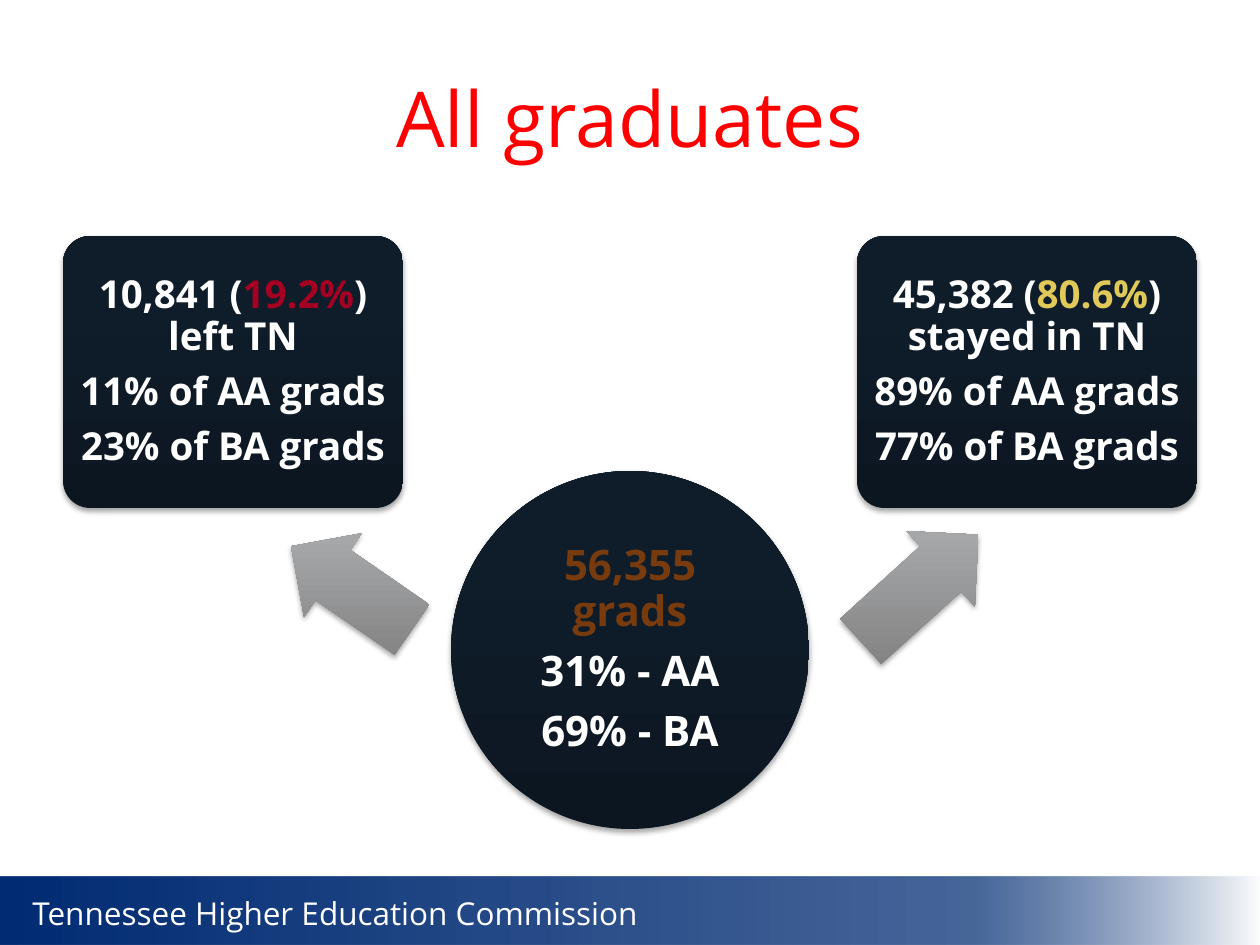
"""Build the slide on where all graduates went."""
from typing import NamedTuple

from lxml.etree import SubElement
from pptx import Presentation
from pptx.dml.color import RGBColor
from pptx.enum.shapes import MSO_SHAPE
from pptx.enum.text import MSO_ANCHOR, PP_ALIGN
from pptx.oxml.ns import qn
from pptx.util import Pt

SCALE = 914400 / 126
FONT = "Open Sans"
WHITE = RGBColor(0xFF, 0xFF, 0xFF)
BLACK = RGBColor(0x00, 0x00, 0x00)
RED = RGBColor(0xFF, 0x00, 0x00)
BLUE = RGBColor(0x00, 0x2C, 0x73)
BROWN = RGBColor(0x78, 0x3B, 0x0D)
WINE = RGBColor(0xA5, 0x00, 0x21)
GOLD = RGBColor(0xE1, 0xC9, 0x59)


class Stop(NamedTuple):
    """One gradient stop, in percent."""
    place: int
    color: RGBColor
    alpha: int = 100


class Run(NamedTuple):
    """A piece of text in one colour."""
    text: str
    color: RGBColor = WHITE


class Node(NamedTuple):
    """A dark shape with centred bold lines."""
    kind: MSO_SHAPE
    area: tuple[int, int, int, int]
    inset: int
    size: int
    lines: list[list[Run]]
    adjust: tuple[float, ...] = ()


class Arrow(NamedTuple):
    """A grey block arrow turned by some degrees."""
    area: tuple[int, int, int, int]
    turn: float


NAVY = [Stop(0, RGBColor(0x0C, 0x16, 0x21)), Stop(80, RGBColor(0x0F, 0x1D, 0x2B)),
        Stop(100, RGBColor(0x0F, 0x1D, 0x2C))]
GREY = [Stop(0, RGBColor(0x80, 0x80, 0x81)), Stop(80, RGBColor(0xA6, 0xA7, 0xA8)),
        Stop(100, RGBColor(0xA7, 0xA7, 0xA9))]
BAND = [Stop(0, BLUE), Stop(77, BLUE, 72), Stop(100, WHITE)]


def box(left: int, count: str, share: Run, where: str, shares: tuple[int, int]) -> Node:
    """Describe one outcome box."""
    lines = [[Run(f"{count} ("), share, Run(f") {where}")]]
    lines += [[Run(f"{part}% of {level} grads")] for part, level in zip(shares, ("AA", "BA"))]
    return Node(MSO_SHAPE.ROUNDED_RECTANGLE, (left, 236, 340, 272), 6, 22, lines, (0.1,))


NODES = [
    Node(MSO_SHAPE.OVAL, (451, 471, 358, 358), 2, 24,
         [[Run("56,355 grads", BROWN)], [Run("31% - AA")], [Run("69% - BA")]]),
    box(63, "10,841", Run("19.2%", WINE), "left TN", (11, 23)),
    box(857, "45,382", Run("80.6%", GOLD), "stayed in TN", (89, 77)),
]
ARROWS = [Arrow((278, 537, 147, 102), 34.6), Arrow((840, 537, 159, 102), 137.8)]


def px(size: int) -> int:
    """Turn pixels into EMU."""
    return round(size * SCALE)


def tint(parent, color: RGBColor, alpha: int) -> None:
    """Add a colour element with its opacity."""
    node = SubElement(parent, qn("a:srgbClr"), val=str(color))
    if alpha < 100:
        SubElement(node, qn("a:alpha"), val=str(alpha * 1000))


def shade(shape, stops: list[Stop], angle: int) -> None:
    """Fill a shape with a gradient that stays upright."""
    shape.fill.gradient()
    shape.fill.gradient_angle = angle
    grad = shape._element.spPr.find(qn("a:gradFill"))
    grad.set("rotWithShape", "0")
    items = grad.find(qn("a:gsLst"))
    for old in list(items):
        items.remove(old)
    for stop in stops:
        item = SubElement(items, qn("a:gs"), pos=str(stop.place * 1000))
        tint(item, stop.color, stop.alpha)


def draw(slide, kind: MSO_SHAPE, area: tuple[int, int, int, int], stops: list[Stop],
         angle: int = 90, adjust: tuple[float, ...] = (), lift: bool = True):
    """Add a shape with a gradient, no line and an optional shadow."""
    shape = slide.shapes.add_shape(kind, *map(px, area))
    for index, value in enumerate(adjust):
        shape.adjustments[index] = value
    shade(shape, stops, angle)
    shape.line.fill.background()
    shape.shadow.inherit = False
    if lift:
        effects = shape._element.spPr.find(qn("a:effectLst"))
        cast = SubElement(effects, qn("a:outerShdw"), blurRad=str(Pt(3.1)),
                          dist=str(Pt(1.8)), dir="5400000", rotWithShape="0")
        tint(cast, BLACK, 35)
    return shape


def write(par, runs: list[Run], size: int, bold: bool = False) -> None:
    """Put coloured runs into a paragraph."""
    for part in runs:
        run = par.add_run()
        run.text = part.text
        run.font.color.rgb = part.color
        for name, value in {"name": FONT, "size": Pt(size), "bold": bold}.items():
            setattr(run.font, name, value)


def label(slide, area: tuple[int, int, int, int], run: Run, size: int,
          align: PP_ALIGN, anchor: MSO_ANCHOR, wrap: bool) -> None:
    """Add a one-line text box."""
    frame = slide.shapes.add_textbox(*map(px, area)).text_frame
    frame.word_wrap = wrap
    frame.vertical_anchor = anchor
    frame.paragraphs[0].alignment = align
    write(frame.paragraphs[0], [run], size)


def fill_node(slide, node: Node) -> None:
    """Draw a dark shape and its lines."""
    frame = draw(slide, node.kind, node.area, NAVY, adjust=node.adjust).text_frame
    frame.word_wrap = True
    frame.vertical_anchor = MSO_ANCHOR.MIDDLE
    for side in ("left", "top", "right", "bottom"):
        setattr(frame, f"margin_{side}", px(node.inset))
    style = {"alignment": PP_ALIGN.CENTER, "line_spacing": 0.9,
             "space_after": Pt(node.size * 0.35)}
    for index, runs in enumerate(node.lines):
        par = frame.add_paragraph() if index else frame.paragraphs[0]
        for name, value in style.items():
            setattr(par, name, value)
        write(par, runs, node.size, True)


def main() -> None:
    """Build and save the slide."""
    deck = Presentation()
    deck.slide_width, deck.slide_height = px(1260), px(945)
    slide = deck.slides.add_slide(deck.slide_layouts[6])
    draw(slide, MSO_SHAPE.RECTANGLE, (0, 877, 1263, 68), BAND, angle=0, lift=False)
    label(slide, (20, 888, 636, 50), Run("Tennessee Higher Education Commission"), 18,
          PP_ALIGN.LEFT, MSO_ANCHOR.TOP, False)
    label(slide, (63, 38, 1134, 158), Run("All graduates", RED), 44,
          PP_ALIGN.CENTER, MSO_ANCHOR.MIDDLE, True)
    for node in NODES:
        fill_node(slide, node)
    for arrow in ARROWS:
        shape = draw(slide, MSO_SHAPE.LEFT_ARROW, arrow.area, GREY, adjust=(0.6, 0.5))
        shape.rotation = arrow.turn
    deck.save("out.pptx")


if __name__ == "__main__":
    main()
